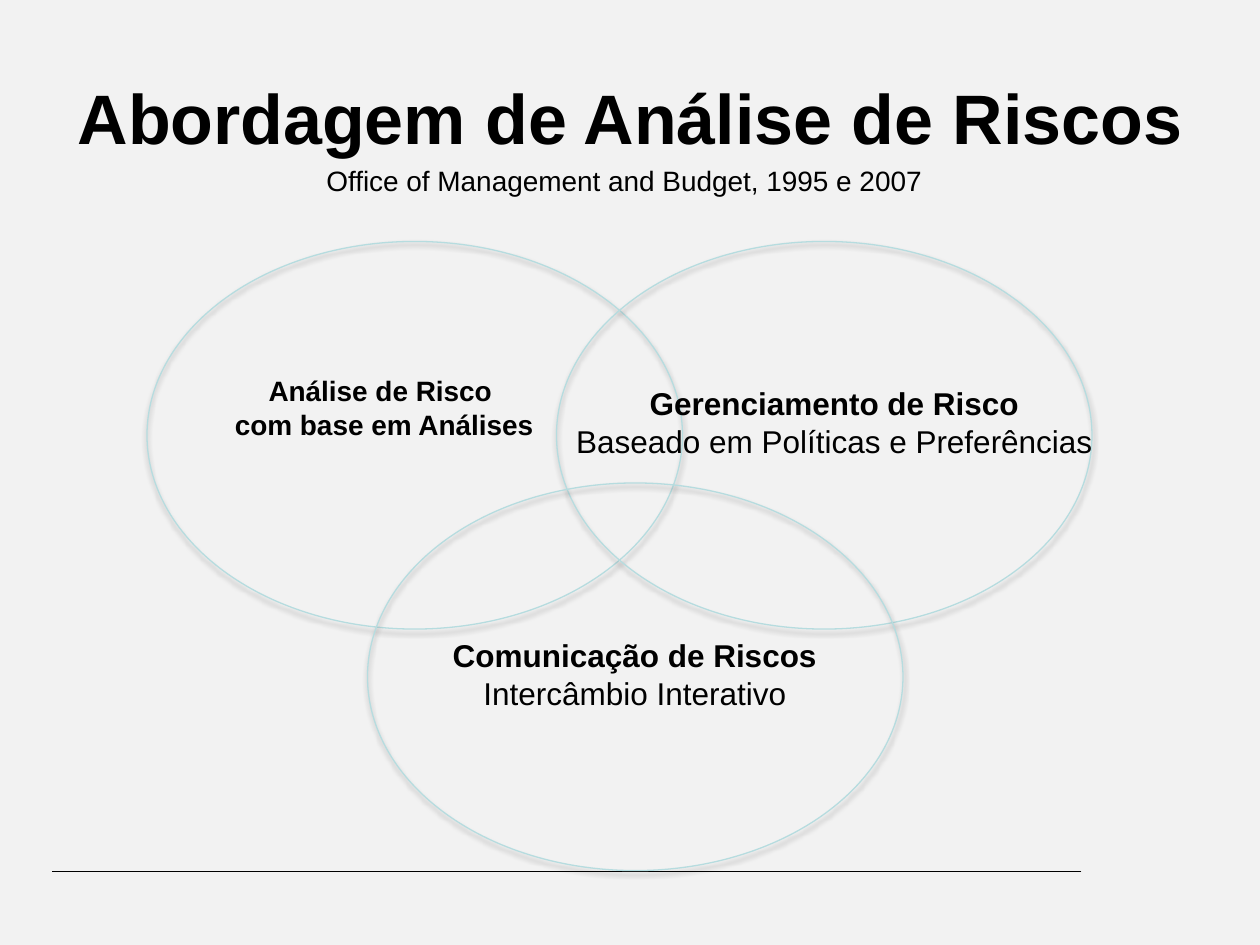
from dataclasses import dataclass
from lxml.etree import SubElement
from pptx import Presentation
from pptx.dml.color import RGBColor as RGB
from pptx.enum.shapes import MSO_CONNECTOR as Conn, MSO_SHAPE as Geom
from pptx.enum.text import MSO_ANCHOR as Anchor, MSO_AUTO_SIZE as Fit, PP_ALIGN as Align
from pptx.oxml.ns import qn
from pptx.slide import Slide
from pptx.text.text import TextFrame
from pptx.util import Pt


@dataclass(frozen=True)
class Theme:
    font: str = "Arial"
    ink: RGB = RGB(0, 0, 0)
    back: RGB = RGB(0xF2, 0xF2, 0xF2)
    ring: RGB = RGB(0xB6, 0xDC, 0xDF)
    line: float = 0.75
    title: int = 40
    large: int = 18
    small: int = 16


@dataclass(frozen=True)
class Label:
    left: float
    top: float
    width: float
    height: float
    size: int
    lines: tuple[str, ...]
    bold: tuple[bool, ...]


THEME = Theme()
RING_W, RING_H = 306, 221.5
RINGS = ((84, 138), (318, 138), (210, 276))
LABELS = (
    Label(126, 210, 187, 46, THEME.small,
          ("Análise de Risco ", "com base em Análises"), (True, True)),
    Label(320.5, 216, 312.5, 51, THEME.large,
          ("Gerenciamento de Risco", "Baseado em Políticas e Preferências"), (True, False)),
    Label(250.5, 360, 224.5, 51, THEME.large,
          ("Comunicação de Riscos", "Intercâmbio Interativo"), (True, False)),
    Label(177, 90, 359.5, 26.5, THEME.small,
          ("Office of Management and Budget, 1995 e 2007",), (False,)),
)


def write(frame: TextFrame, lines: tuple[str, ...], size: int, bold: tuple[bool, ...]) -> None:
    frame.text = "\n".join(lines)
    for para, heavy in zip(frame.paragraphs, bold):
        para.alignment = Align.CENTER
        for run in para.runs:
            font = run.font
            font.name, font.size, font.bold = THEME.font, Pt(size), heavy
            font.color.rgb = THEME.ink


def add_title(slide: Slide, text: str) -> None:
    title = slide.shapes.title
    title.left, title.top, title.width, title.height = Pt(36), Pt(21.6), Pt(648), Pt(90)
    title.text_frame.vertical_anchor = Anchor.MIDDLE
    write(title.text_frame, (text,), THEME.title, (True,))


def add_rule(slide: Slide) -> None:
    rule = slide.shapes.add_connector(Conn.STRAIGHT, Pt(618), Pt(498), Pt(30), Pt(498))
    rule.line.color.rgb, rule.line.width = THEME.ink, Pt(THEME.line)
    SubElement(rule._element.spPr, qn("a:effectLst"))


def add_ring(slide: Slide, left: float, top: float) -> None:
    """Draw an unfilled ellipse with a soft shadow straight below it."""
    ring = slide.shapes.add_shape(Geom.OVAL, Pt(left), Pt(top), Pt(RING_W), Pt(RING_H))
    ring.fill.background()
    ring.line.color.rgb, ring.line.width = THEME.ring, Pt(THEME.line)
    ring.shadow.inherit = False
    glow = SubElement(ring._element.spPr.find(qn("a:effectLst")), qn("a:outerShdw"),
                      blurRad=str(Pt(3.1)), dist=str(Pt(1.8)), dir="5400000", rotWithShape="0")
    tint = SubElement(glow, qn("a:srgbClr"), val=str(THEME.ink))
    SubElement(tint, qn("a:alpha"), val="35000")


def add_label(slide: Slide, label: Label) -> None:
    box = slide.shapes.add_textbox(Pt(label.left), Pt(label.top), Pt(label.width), Pt(label.height))
    frame = box.text_frame
    frame.word_wrap, frame.auto_size = False, Fit.SHAPE_TO_FIT_TEXT
    write(frame, label.lines, label.size, label.bold)


def main() -> None:
    deck = Presentation()
    deck.slide_width, deck.slide_height = Pt(720), Pt(540)
    slide = deck.slides.add_slide(deck.slide_layouts[5])
    fill = slide.background.fill
    fill.solid()
    fill.fore_color.rgb = THEME.back
    add_rule(slide)
    add_title(slide, "Abordagem de Análise de Riscos")
    for left, top in RINGS:
        add_ring(slide, left, top)
    for label in LABELS:
        add_label(slide, label)
    deck.save("out.pptx")


if __name__ == "__main__":
    main()
